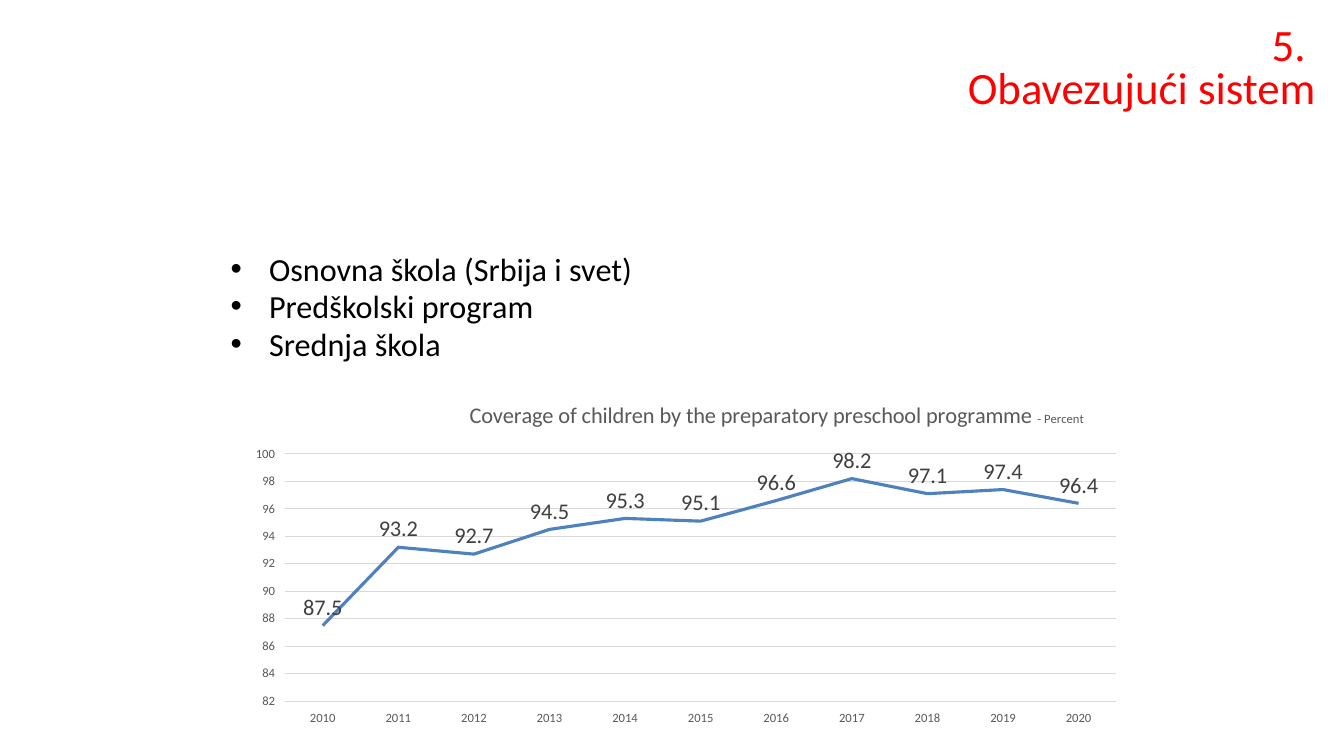
from lxml import etree
from pptx import Presentation
from pptx.chart.data import CategoryChartData
from pptx.dml.color import RGBColor
from pptx.enum.chart import (XL_CHART_TYPE, XL_LABEL_POSITION, XL_MARKER_STYLE,
                             XL_TICK_LABEL_POSITION as TickLabels, XL_TICK_MARK)
from pptx.enum.text import MSO_ANCHOR, PP_ALIGN
from pptx.oxml import parse_xml
from pptx.oxml.ns import nsdecls, qn
from pptx.util import Inches, Pt

COLORS = {"title": "FF0000", "body": "000000", "axis": "595959",
          "grid": "D9D9D9", "label": "404040", "line": "4F81BD"}
COVERAGE = [87.5, 93.2, 92.7, 94.5, 95.3, 95.1, 96.6, 98.2, 97.1, 97.4, 96.4]


class SlideBuilder:
    font_name = "Calibri"
    line_spacing = 0.8

    def __init__(self, page):
        self.page = page

    def color(self, name):
        return RGBColor.from_string(COLORS[name])

    def apply(self, target, values):
        for name, value in values.items():
            setattr(target, name, value)

    def style_font(self, font, size, color):
        self.apply(font, {"name": self.font_name, "size": Pt(size), "bold": False})
        font.color.rgb = self.color(color)

    def style_line(self, line, color, width):
        line.color.rgb = self.color(color)
        line.width = Pt(width)

    def text(self, area, lines, size, color, bullet=None, **options):
        box = self.page.shapes.add_textbox(*map(Inches, area))
        frame = box.text_frame
        self.apply(frame, {"word_wrap": True,
                           "vertical_anchor": options.get("anchor", MSO_ANCHOR.TOP)})
        for index, line in enumerate(lines):
            para = frame.paragraphs[0] if index == 0 else frame.add_paragraph()
            para.text = line
            if bullet:
                self.add_bullet(para, bullet)
            self.apply(para, {"alignment": options.get("align", PP_ALIGN.LEFT),
                              "line_spacing": self.line_spacing,
                              "space_before": Pt(options.get("gap", 0) if index else 0)})
            for span in para.runs:
                self.style_font(span.font, size, color)

    def add_bullet(self, para, bullet):
        props = para._p.get_or_add_pPr()
        props.set("marL", str(Inches(0.38)))
        props.set("indent", str(-Inches(0.38)))
        etree.SubElement(props, qn("a:buFont"), typeface="Arial")
        etree.SubElement(props, qn("a:buChar"), char=bullet)

    def set_layout(self, parent, index, **places):
        for old in parent.findall(qn("c:layout")):
            parent.remove(old)
        modes = {"xMode": "edge", "yMode": "edge"}
        if "w" in places:
            modes = {"layoutTarget": "inner", **modes}
        entries = "".join(f'<c:{name} val="{value}"/>'
                          for name, value in {**modes, **places}.items())
        parent.insert(index, parse_xml(
            f'<c:layout {nsdecls("c")}><c:manualLayout>{entries}'
            '</c:manualLayout></c:layout>'))

    def line_chart(self, area, categories, values, title_spans):
        data = CategoryChartData(number_format="0.0")
        data.categories = categories
        data.add_series("Series 1", values)
        chart = self.page.shapes.add_chart(
            XL_CHART_TYPE.LINE, *map(Inches, area), data).chart
        chart.has_legend = False
        self.style_font(chart.font, 10, "body")

        # Chart title
        chart.has_title = True
        title = chart.chart_title
        para = title.text_frame.paragraphs[0]
        for text, size in title_spans:
            span = para.add_run()
            span.text = text
            self.style_font(span.font, size, "axis")
        self.set_layout(title._element, 1, x=0.25, y=0.02)
        plot_area = chart._chartSpace.chart.plotArea
        self.set_layout(plot_area, 0, x=0.046, y=0.188, w=0.934, h=0.74)

        # Axes
        for axis in (chart.category_axis, chart.value_axis):
            self.apply(axis, {"major_tick_mark": XL_TICK_MARK.NONE,
                              "minor_tick_mark": XL_TICK_MARK.NONE,
                              "tick_label_position": TickLabels.LOW})
            self.style_font(axis.tick_labels.font, 9, "axis")
        self.style_line(chart.category_axis.format.line, "grid", 0.75)
        scale = chart.value_axis
        self.apply(scale, {"minimum_scale": 82, "maximum_scale": 100,
                           "major_unit": 2, "crosses_at": 90,
                           "has_major_gridlines": True})
        self.apply(scale.tick_labels, {"number_format": "0",
                                       "number_format_is_linked": False})
        scale.format.line.fill.background()
        self.style_line(scale.major_gridlines.format.line, "grid", 0.75)

        # Series and value labels
        plot = chart.plots[0]
        plot.vary_by_categories = False
        series = plot.series[0]
        series.smooth = False
        series.marker.style = XL_MARKER_STYLE.NONE
        self.style_line(series.format.line, "line", 2.25)
        labels = series.data_labels
        self.apply(labels, {"show_value": True, "position": XL_LABEL_POSITION.ABOVE,
                            "number_format": "0.0", "number_format_is_linked": False})
        self.style_font(labels.font, 16, "label")


def main():
    deck = Presentation()
    deck.slide_width, deck.slide_height = Inches(13.33), Inches(7.5)
    builder = SlideBuilder(deck.slides.add_slide(deck.slide_layouts[6]))

    # Heading
    builder.text((2.42, 0.17, 10.73, 1.06), ["5. \vObavezujući sistem"], 32, "title",
                 align=PP_ALIGN.RIGHT, anchor=MSO_ANCHOR.MIDDLE)

    # Bullet list
    builder.text((2.19, 2.5, 8.42, 1.3),
                 ["Osnovna škola (Srbija i svet)", "Predškolski program", "Srednja škola"],
                 23, "body", bullet="•", gap=4.6)

    # Coverage chart
    builder.line_chart((2.42, 3.88, 8.83, 3.32),
                       [str(year) for year in range(2010, 2021)], COVERAGE,
                       [("Coverage of children by the preparatory preschool programme ", 16),
                        ("- Percent", 9)])
    deck.save("out.pptx")


if __name__ == "__main__":
    main()
